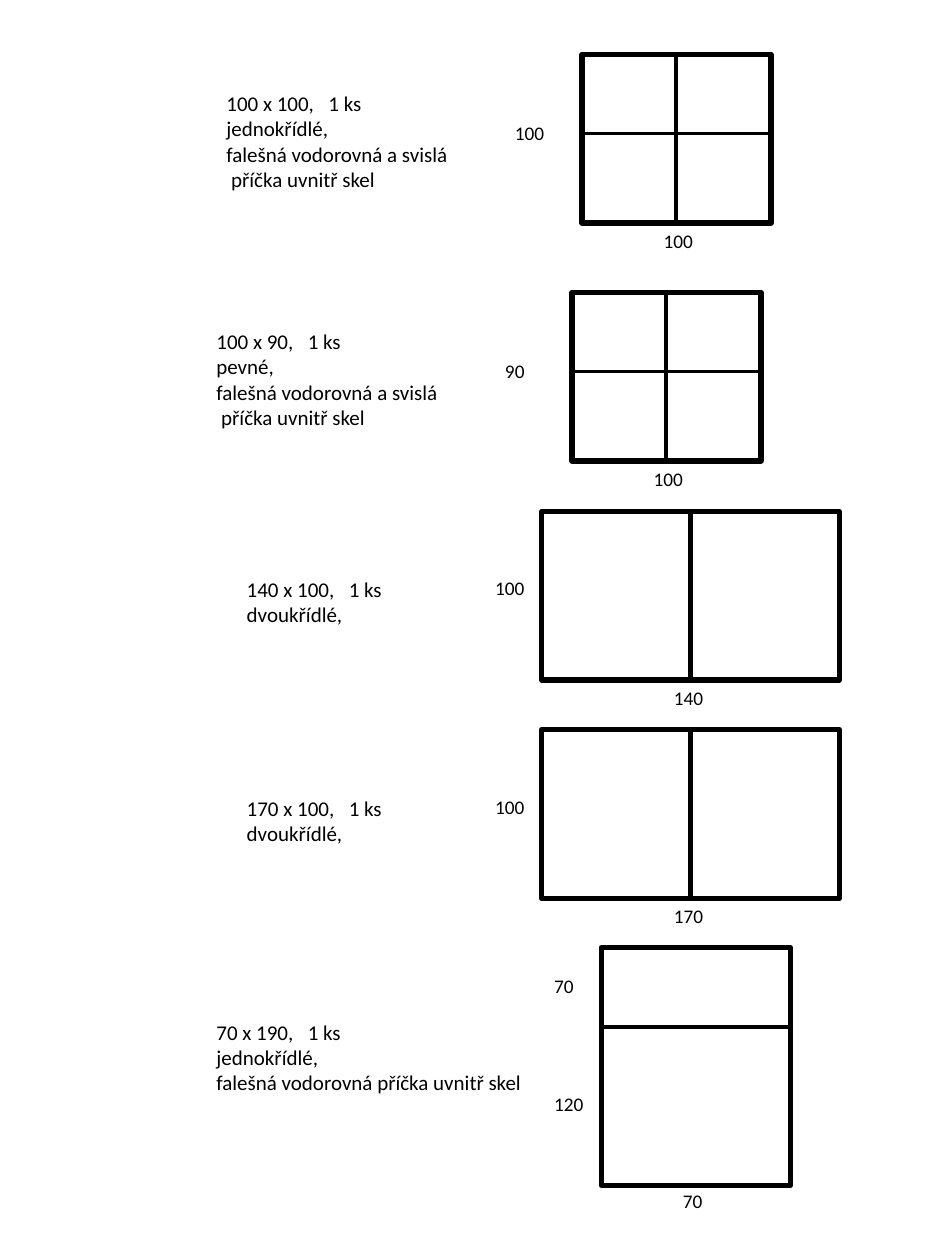
from dataclasses import dataclass

from lxml.etree import SubElement
from pptx import Presentation
from pptx.dml.color import RGBColor
from pptx.enum.shapes import MSO_CONNECTOR, MSO_SHAPE
from pptx.enum.text import MSO_AUTO_SIZE
from pptx.oxml.ns import qn
from pptx.util import Pt


@dataclass(frozen=True)
class Theme:
    ink: RGBColor = RGBColor(0, 0, 0)
    font: str = "Calibri"
    note_size: float = 12
    label_size: float = 11
    frame_line: float = 3
    bar_line: float = 2


@dataclass(frozen=True)
class Window:
    """Box and note are in slide points; bars and labels are offsets in the box."""
    box: tuple
    note_box: tuple
    size: str
    count_tab: float
    details: tuple
    labels: tuple
    mullion: float = 0
    transom: float = 0
    bar_line: float = Theme.bar_line
    indented: str = ""


THEME = Theme()
PIECES = "1 ks"
LABEL_HEIGHT = 20.6
CROSS_BARS = ("falešná vodorovná a svislá", "příčka uvnitř skel")


def cross_window(left, top, size, count_tab, kind, height):
    height_width = 31.7 if len(height) == 3 else 25.9
    return Window(
        (left, top, 108, 96.4), (left - 210.3, top + 17.3, 142.6, 65.4),
        size, count_tab, (kind, *CROSS_BARS),
        (("100", 39.6, 96.4, 31.7), (height, -45.4, 34.6, height_width)),
        mullion=53.6, transom=45.4, indented=CROSS_BARS[1])


def double_window(top, width):
    return Window(
        (309.6, top, 170, 96.4), (133.9, top + 33.8, 92.9, 36),
        f"{width} x 100,", 58.3, ("dvoukřídlé,",),
        ((width, 68.4, 96.2, 31.7), ("100", -33.8, 33.8, 31.7)),
        mullion=85, bar_line=THEME.frame_line)


WINDOWS = (
    cross_window(332.6, 31, "100 x 100,", 58.3, "jednokřídlé,", "100"),
    cross_window(326.9, 167, "100 x 90,", 52.2, "pevné,", "90"),
    double_window(292.2, "140"),
    double_window(417, "170"),
    Window((343.6, 541.4, 108, 136), (116.6, 578.9, 195.1, 51),
           "70 x 190,", 52.2,
           ("jednokřídlé,", "falešná vodorovná příčka uvnitř skel"),
           (("70", -34, 11.5, 25.9), ("120", -34, 79.2, 31.7),
            ("70", 39.6, 134.8, 25.9)),
           transom=45.4),
)


def add_text(slide, box, lines, size):
    frame = slide.shapes.add_textbox(*map(Pt, box)).text_frame
    frame.word_wrap = False
    frame.auto_size = MSO_AUTO_SIZE.SHAPE_TO_FIT_TEXT
    frame.text = "\n".join(lines)
    for paragraph in frame.paragraphs:
        paragraph.font.name = THEME.font
        paragraph.font.size = Pt(size)
        paragraph.font.color.rgb = THEME.ink
    return frame.paragraphs


def add_bar(slide, start, end, weight):
    bar = slide.shapes.add_connector(
        MSO_CONNECTOR.STRAIGHT, *map(Pt, (*start, *end)))
    bar.line.color.rgb = THEME.ink
    bar.line.width = Pt(weight)
    SubElement(bar._element.spPr, qn("a:effectLst"))


def add_drawing(slide, window):
    left, top, width, height = window.box
    frame = slide.shapes.add_shape(MSO_SHAPE.RECTANGLE, *map(Pt, window.box))
    frame.shadow.inherit = False
    frame.fill.background()
    frame.line.color.rgb = THEME.ink
    frame.line.width = Pt(THEME.frame_line)
    if window.mullion:
        x = left + window.mullion
        add_bar(slide, (x, top), (x, top + height), window.bar_line)
    if window.transom:
        y = top + window.transom
        add_bar(slide, (left, y), (left + width, y), window.bar_line)
    for text, dx, dy, label_width in window.labels:
        add_text(slide, (left + dx, top + dy, label_width, LABEL_HEIGHT),
                 [text], THEME.label_size)


def add_note(slide, window):
    heading = f"{window.size}\t{PIECES}"
    paragraphs = add_text(slide, window.note_box, (heading, *window.details),
                          THEME.note_size)
    properties = paragraphs[0]._p.get_or_add_pPr()
    tabs = SubElement(properties, qn("a:tabLst"))
    SubElement(tabs, qn("a:tab"), pos=str(Pt(window.count_tab)), algn="l")
    properties.insert(0, tabs)
    if window.indented:
        paragraphs[-1]._p.get_or_add_pPr().set("marL", str(Pt(2.7)))


def main():
    presentation = Presentation()
    presentation.slide_width = Pt(540)
    presentation.slide_height = Pt(720)
    slide = presentation.slides.add_slide(presentation.slide_layouts[6])
    for window in WINDOWS:
        add_drawing(slide, window)
        add_note(slide, window)
    presentation.save("out.pptx")


if __name__ == "__main__":
    main()
